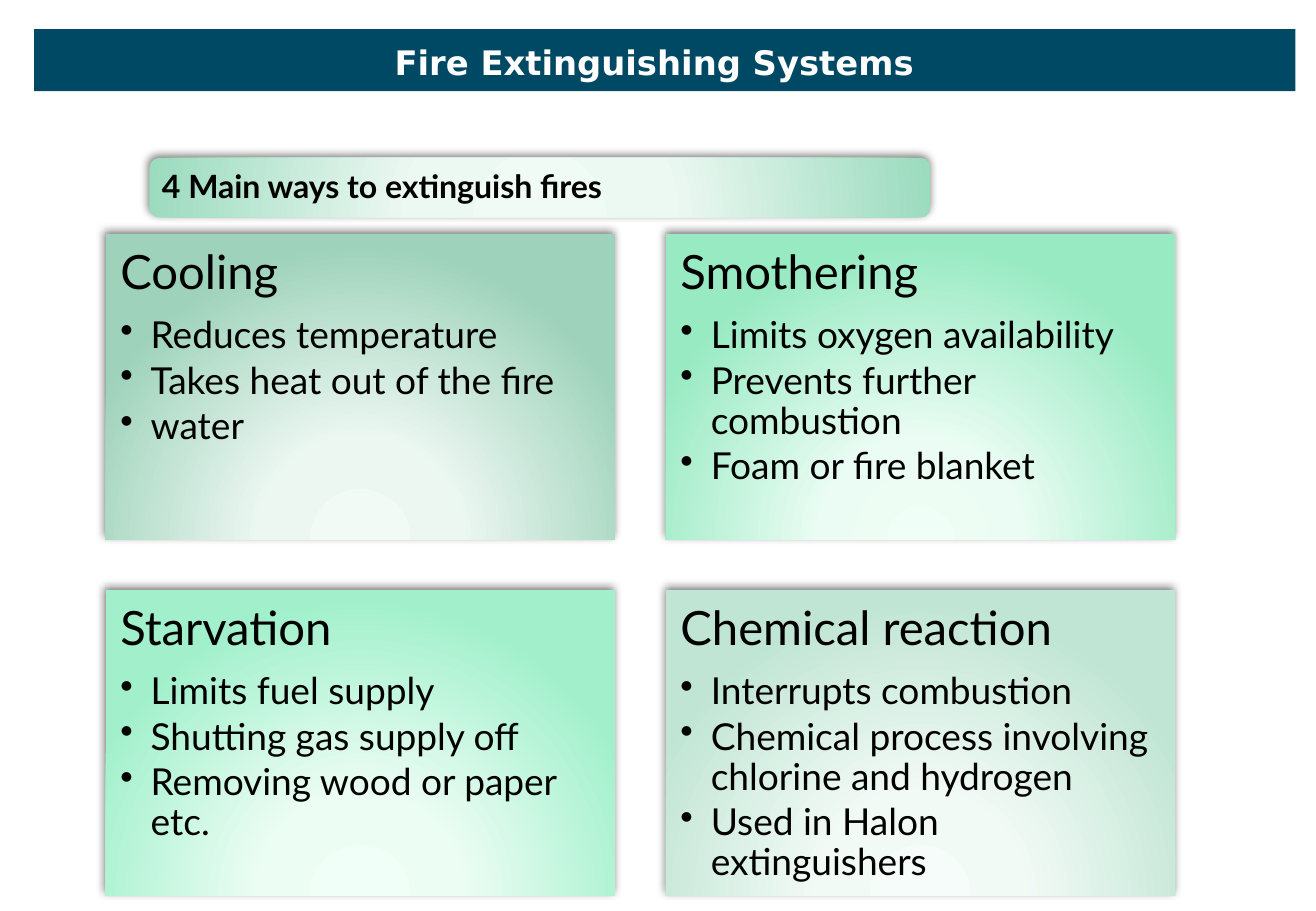
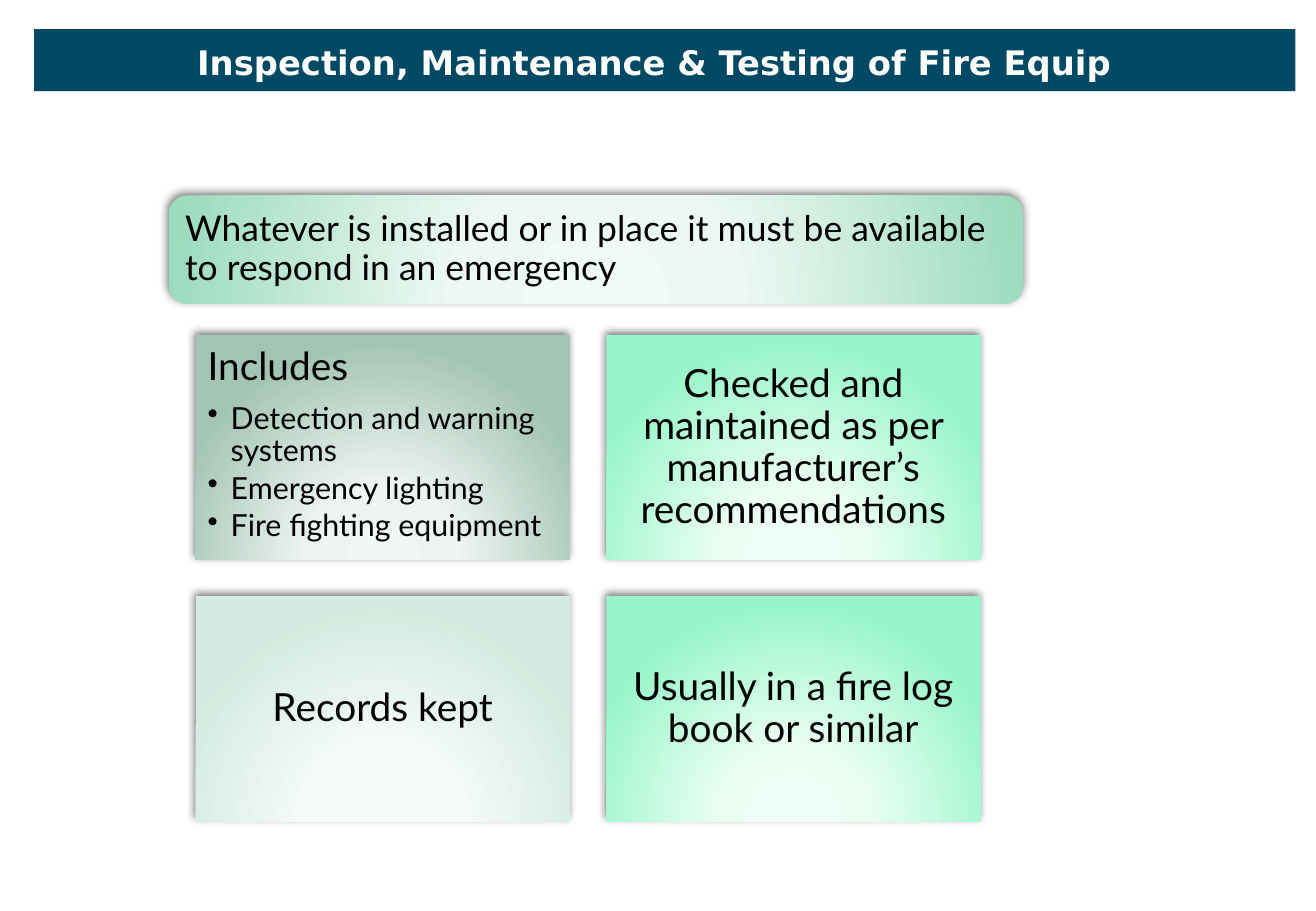
from dataclasses import dataclass

from lxml import etree
from pptx import Presentation
from pptx.dml import color
from pptx.enum import shapes, text
from pptx.oxml import ns
from pptx.util import Inches, Pt


@dataclass(frozen=True)
class Theme:
    band: color.RGBColor = color.RGBColor(0x00, 0x49, 0x64)
    title: color.RGBColor = color.RGBColor(0xFF, 0xFF, 0xFF)
    body: color.RGBColor = color.RGBColor(0x00, 0x00, 0x00)
    # Gradients run from the glow below a panel to its outer edge
    banner: tuple = ("F0FBF6", "ECF8F2", "9BDBBE")
    sage: tuple = ("F1FAF5", "ECF7F2", "9ED2BA")
    mint: tuple = ("EFFEF6", "EAFCF3", "98EAC3")
    spring: tuple = ("F0FFF7", "ECFDF4", "A1F0CB")
    pale: tuple = ("F5FCF9", "F2FAF6", "C0E5D4")
    moss: tuple = ("F2F7F5", "EEF4F1", "A3C4B4")
    bright: tuple = ("EFFFF7", "EAFEF4", "98F5C9")
    mist: tuple = ("F7FCFA", "F5FBF8", "D2EADF")
    title_font: str = "DejaVu Sans"
    body_font: str = "Lato"
    title_size: int = 20


THEME = Theme()


@dataclass(frozen=True)
class Card:
    heading: str
    gradient: tuple
    bullets: tuple = ()


@dataclass(frozen=True)
class Banner:
    wording: str
    box: tuple
    size: int
    inset: float
    bold: bool = False


@dataclass(frozen=True)
class Grid:
    left: float
    top: float
    width: float
    height: float
    gap: float
    inset: float
    indent: float
    heading_size: int
    bullet_size: int


@dataclass(frozen=True)
class Topic:
    title: str
    banner: Banner
    grid: Grid
    cards: tuple


TOPICS = (
    Topic(
        "Fire Extinguishing Systems",
        Banner("4 Main ways to extinguish fires", (1.23, 1.3, 6.43, 0.49), 19, 0.08, True),
        Grid(0.87, 1.93, 4.19, 2.51, 0.42, 0.12, 0.25, 28, 22),
        (
            Card("Cooling", THEME.sage,
                 ("Reduces temperature", "Takes heat out of the fire", "water")),
            Card("Smothering", THEME.mint,
                 ("Limits oxygen availability", "Prevents further combustion",
                  "Foam or fire blanket")),
            Card("Starvation", THEME.spring,
                 ("Limits fuel supply", "Shutting gas supply off",
                  "Removing wood or paper etc.")),
            Card("Chemical reaction", THEME.pale,
                 ("Interrupts combustion",
                  "Chemical process involving chlorine and hydrogen",
                  "Used in Halon extinguishers")),
        ),
    ),
    Topic(
        "Inspection, Maintenance & Testing of Fire Equip",
        Banner("Whatever is installed or in place it must be available "
               "to respond in an emergency", (1.39, 1.61, 7.03, 0.89), 21, 0.09),
        Grid(1.61, 2.76, 3.08, 1.85, 0.3, 0.1, 0.19, 23, 18),
        (
            Card("Includes", THEME.moss,
                 ("Detection and warning systems", "Emergency lighting",
                  "Fire fighting equipment")),
            Card("Checked and maintained as per manufacturer’s recommendations",
                 THEME.bright),
            Card("Records kept", THEME.mist),
            Card("Usually in a fire log book or similar", THEME.bright),
        ),
    ),
)


def add_run(paragraph, wording: str, size: float, font: str,
            fill: color.RGBColor, bold: bool = False) -> None:
    run = paragraph.add_run()
    run.text = wording
    run.font.size, run.font.name, run.font.bold = Pt(size), font, bold
    run.font.color.rgb = fill


def add_panel(slide, kind, box: tuple, gradient: tuple, inset: float):
    """Draw a glowing panel with a soft shadow, ready for text."""
    panel = slide.shapes.add_shape(kind, *map(Inches, box))
    panel.line.fill.background()
    panel.fill.background()
    panel.shadow.inherit = False
    properties = panel.element.spPr

    # Radial fill centred below the panel
    stops = "".join(f'<a:gs pos="{pos}000"><a:srgbClr val="{tone}"/></a:gs>'
                    for pos, tone in zip((0, 34, 100), gradient))
    properties.replace(properties.find(ns.qn("a:noFill")), etree.fromstring(
        f'<a:gradFill {ns.nsdecls("a")} rotWithShape="1"><a:gsLst>{stops}</a:gsLst>'
        '<a:path path="circle"><a:fillToRect l="50000" t="155000" r="50000" b="-55000"/>'
        '</a:path></a:gradFill>'))
    properties.find(ns.qn("a:effectLst")).append(etree.fromstring(
        f'<a:outerShdw {ns.nsdecls("a")} blurRad="{Pt(5)}" dist="{Pt(2)}" '
        f'dir="{245 * 60000}" rotWithShape="0">'
        '<a:srgbClr val="000000"><a:alpha val="50000"/></a:srgbClr></a:outerShdw>'))

    frame = panel.text_frame
    frame.word_wrap = True
    frame.vertical_anchor = text.MSO_ANCHOR.MIDDLE
    frame.margin_left = frame.margin_right = Inches(inset)
    frame.margin_top = frame.margin_bottom = Inches(inset)
    return frame


def add_line(paragraph, wording: str, size: int, after: float,
             align=text.PP_ALIGN.LEFT, bold: bool = False) -> None:
    paragraph.alignment = align
    paragraph.line_spacing = 0.9
    paragraph.space_after = Pt(size * after)
    add_run(paragraph, wording, size, THEME.body_font, THEME.body, bold)


def add_card(slide, card: Card, grid: Grid, index: int) -> None:
    row, column = divmod(index, 2)
    box = (grid.left + column * (grid.width + grid.gap),
           grid.top + row * (grid.height + grid.gap), grid.width, grid.height)
    frame = add_panel(slide, shapes.MSO_SHAPE.RECTANGLE, box, card.gradient, grid.inset)
    if card.bullets:
        frame.vertical_anchor = text.MSO_ANCHOR.TOP
    align = text.PP_ALIGN.LEFT if card.bullets else text.PP_ALIGN.CENTER
    add_line(frame.paragraphs[0], card.heading, grid.heading_size, 0.35, align)
    for wording in card.bullets:
        item = frame.add_paragraph()
        item.level = 1
        add_line(item, wording, grid.bullet_size, 0.15)
        settings = item._p.get_or_add_pPr()
        settings.set("marL", str(Inches(grid.indent)))
        settings.set("indent", str(-Inches(grid.indent)))
        etree.SubElement(settings, ns.qn("a:buChar"), char="•")


def add_banner(slide, banner: Banner) -> None:
    frame = add_panel(slide, shapes.MSO_SHAPE.ROUNDED_RECTANGLE, banner.box,
                      THEME.banner, banner.inset)
    add_line(frame.paragraphs[0], banner.wording, banner.size, 0.35, bold=banner.bold)


def set_title(slide, wording: str) -> None:
    title = slide.shapes.title
    title.left, title.top, title.width, title.height = map(Inches, (1.5, 0.29, 7.77, 0.44))
    frame = title.text_frame
    frame.word_wrap = False
    frame.auto_size = text.MSO_AUTO_SIZE.NONE
    frame.vertical_anchor = text.MSO_ANCHOR.TOP
    frame.paragraphs[0].alignment = text.PP_ALIGN.CENTER
    add_run(frame.paragraphs[0], wording, THEME.title_size, THEME.title_font,
            THEME.title, True)


def move_band_to_layout(slide) -> None:
    """Draw the title band and hand it to the layout, behind its placeholders."""
    band = slide.shapes.add_shape(shapes.MSO_SHAPE.RECTANGLE,
                                  *map(Inches, (0.28, 0.24, 10.38, 0.51)))
    band.shadow.inherit = False
    band.fill.solid()
    band.fill.fore_color.rgb = THEME.band
    band.line.fill.background()
    slide.slide_layout.shapes.element.insert(2, band.element)


def main() -> None:
    deck = Presentation()
    deck.slide_width, deck.slide_height = Inches(10.83), Inches(7.5)
    for number, topic in enumerate(TOPICS):
        slide = deck.slides.add_slide(deck.slide_layouts[5])
        if number == 0:
            move_band_to_layout(slide)
        set_title(slide, topic.title)
        for index, card in enumerate(topic.cards):
            add_card(slide, card, topic.grid, index)
        add_banner(slide, topic.banner)
    deck.save("out.pptx")


if __name__ == "__main__":
    main()
